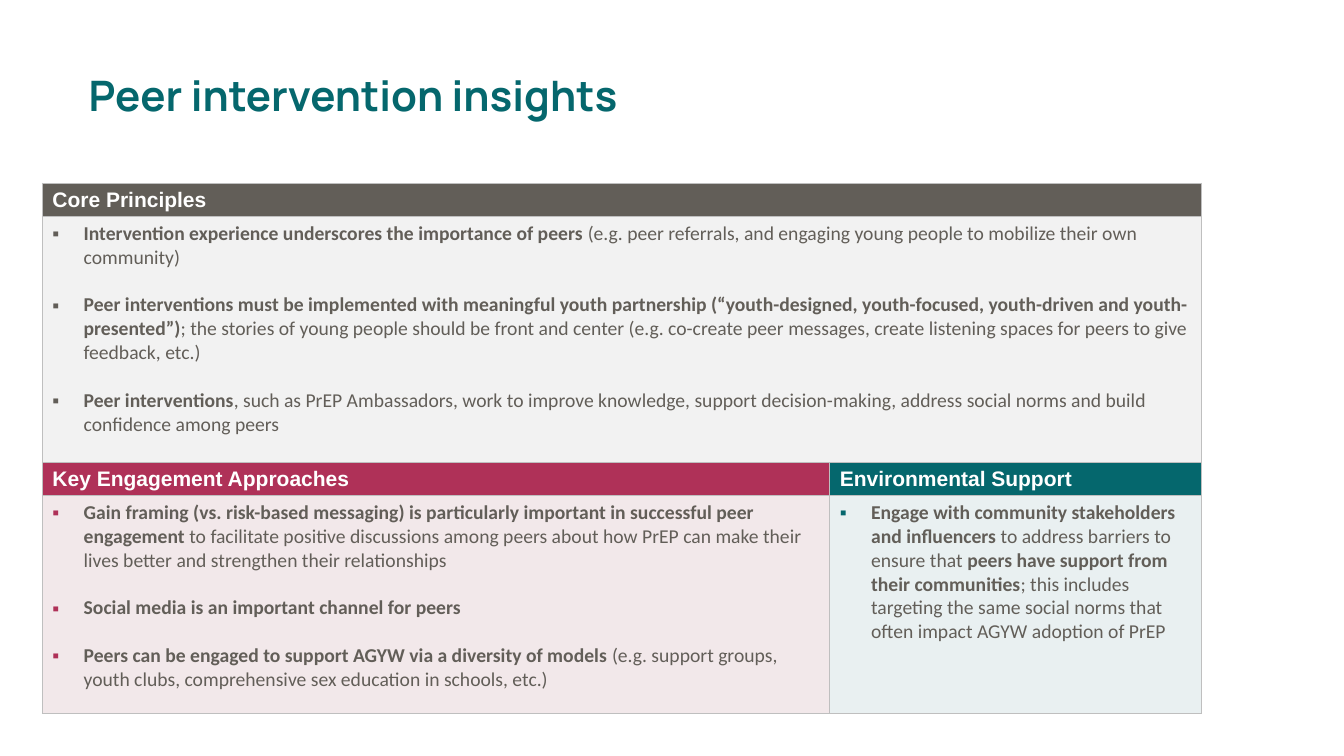
from dataclasses import dataclass

from lxml.etree import SubElement
from pptx import Presentation
from pptx.dml.color import RGBColor
from pptx.enum.text import MSO_ANCHOR as Anchor, MSO_AUTO_SIZE as AutoSize, PP_ALIGN as Align
from pptx.oxml.ns import qn
from pptx.util import Emu, Inches, Pt


@dataclass(frozen=True)
class Theme:
    teal: str = "05676D"
    crimson: str = "AF3158"
    stone: str = "625E58"
    white: str = "FFFFFF"
    border: str = "BFBFBF"
    pale_stone: str = "F2F2F2"
    pale_crimson: str = "F2E8EA"
    pale_teal: str = "E9F0F1"
    title_font: str = "Manrope"
    header_font: str = "Arial"
    body_font: str = "Calibri"
    title_size: float = 30
    header_size: float = 15
    body_size: float = 14
    bullet_gap: float = 17


THEME = Theme()
SLIDE_WIDTH, SLIDE_HEIGHT = 13.33, 7.5
COLUMNS = (7.81, 3.69)
ROWS = (0.33, 2.44, 0.33, 2.16)

# Each bullet is a list of runs that alternate bold and regular
CORE_PRINCIPLES = [
    ["Intervention experience underscores the importance of peers ",
     "(e.g. peer referrals, and engaging young people to mobilize their own community)"],
    ["Peer interventions must be implemented with meaningful youth partnership "
     "(“youth-designed, youth-focused, youth-driven and youth-presented”)",
     "; the stories of young people should be front and center (e.g. co-create peer messages, "
     "create listening spaces for peers to give feedback, etc.)"],
    ["Peer interventions",
     ", such as PrEP Ambassadors, work to improve knowledge, support decision-making, "
     "address social norms and build confidence among peers"],
]
ENGAGEMENT = [
    ["Gain framing (vs. risk-based messaging) is particularly important in successful peer engagement ",
     "to facilitate positive discussions among peers about how PrEP can make their lives better "
     "and strengthen their relationships"],
    ["Social media is an important channel for peers"],
    ["Peers can be engaged to support AGYW via a diversity of models ",
     "(e.g. support groups, youth clubs, comprehensive sex education in schools, etc.)"],
]
SUPPORT = [
    ["Engage with community stakeholders and influencers ",
     "to address barriers to ensure that ",
     "peers have support from their communities",
     "; this includes targeting the same social norms that often impact AGYW adoption of PrEP"],
]


class SlideBuilder:
    def __init__(self, presentation, theme):
        self.theme = theme
        self.width, self.height = presentation.slide_width, presentation.slide_height
        self.slide = presentation.slides.add_slide(presentation.slide_layouts[5])

    def box(self, left, top, width, height):
        """Turn shares of the slide's size into lengths."""
        return (Emu(round(left * self.width)), Emu(round(top * self.height)),
                Emu(round(width * self.width)), Emu(round(height * self.height)))

    def run(self, paragraph, text, font, size, color, bold=True):
        run = paragraph.add_run()
        run.text = text
        run.font.name, run.font.size, run.font.bold = font, Pt(size), bold
        run.font.color.rgb = RGBColor.from_string(color)

    def title(self, text, *shares):
        shape = self.slide.shapes.title
        shape.left, shape.top, shape.width, shape.height = self.box(*shares)
        frame = shape.text_frame
        frame.auto_size, frame.word_wrap = AutoSize.NONE, True
        frame.vertical_anchor = Anchor.MIDDLE
        frame.margin_left = Inches(0.88)
        paragraph = frame.paragraphs[0]
        paragraph.alignment, paragraph.line_spacing = Align.LEFT, 0.9
        self.run(paragraph, text, self.theme.title_font, self.theme.title_size, self.theme.teal)

    def table(self, columns, rows, *shares):
        table = self.slide.shapes.add_table(len(rows), len(columns), *self.box(*shares)).table
        table.first_row = table.horz_banding = False
        for column, width in zip(table.columns, columns):
            column.width = Inches(width)
        for row, height in zip(table.rows, rows):
            row.height = Inches(height)
        for cell in table.iter_cells():
            self.borders(cell)
        return table

    def borders(self, cell):
        properties = cell._tc.get_or_add_tcPr()
        for side in ("a:lnL", "a:lnR", "a:lnT", "a:lnB"):
            line = SubElement(properties, qn(side), w=str(Pt(1)))
            SubElement(SubElement(line, qn("a:solidFill")), qn("a:srgbClr"), val=self.theme.border)

    def fill(self, cell, color):
        cell.fill.solid()
        cell.fill.fore_color.rgb = RGBColor.from_string(color)

    def header(self, cell, text, color):
        self.fill(cell, color)
        cell.vertical_anchor = Anchor.MIDDLE
        cell.margin_top = cell.margin_bottom = Inches(0.04)
        self.run(cell.text_frame.paragraphs[0], text,
                 self.theme.header_font, self.theme.header_size, self.theme.white)

    def bullets(self, cell, items, color, bullet_color):
        self.fill(cell, color)
        cell.vertical_anchor = Anchor.TOP
        frame = cell.text_frame
        for index, runs in enumerate(items):
            paragraph = frame.add_paragraph() if index else frame.paragraphs[0]
            self.bullet(paragraph, bullet_color)
            if index:
                paragraph.space_before = Pt(self.theme.bullet_gap)
            for position, text in enumerate(runs):
                self.run(paragraph, text, self.theme.body_font, self.theme.body_size,
                         self.theme.stone, bold=position % 2 == 0)

    def bullet(self, paragraph, color):
        properties = paragraph._p.get_or_add_pPr()
        indent = Inches(0.31)
        properties.set("marL", str(indent))
        properties.set("indent", str(-indent))
        SubElement(SubElement(properties, qn("a:buClr")), qn("a:srgbClr"), val=color)
        SubElement(properties, qn("a:buFont"), typeface=self.theme.header_font)
        SubElement(properties, qn("a:buChar"), char="▪")


def main():
    presentation = Presentation()
    presentation.slide_width, presentation.slide_height = Inches(SLIDE_WIDTH), Inches(SLIDE_HEIGHT)
    builder = SlideBuilder(presentation, THEME)

    # Title
    builder.title("Peer intervention insights", 0, 0.35 / SLIDE_HEIGHT,
                  11.5 / SLIDE_WIDTH, 1.25 / SLIDE_HEIGHT)

    # Table frame, with the top section spanning both columns
    table = builder.table(COLUMNS, ROWS, 0.42 / SLIDE_WIDTH, 1.82 / SLIDE_HEIGHT,
                          sum(COLUMNS) / SLIDE_WIDTH, sum(ROWS) / SLIDE_HEIGHT)
    for row in (0, 1):
        table.cell(row, 0).merge(table.cell(row, 1))

    # Sections: a header cell with its bullets in the row below
    sections = [
        (0, 0, "Core Principles", CORE_PRINCIPLES, THEME.stone, THEME.pale_stone),
        (2, 0, "Key Engagement Approaches", ENGAGEMENT, THEME.crimson, THEME.pale_crimson),
        (2, 1, "Environmental Support", SUPPORT, THEME.teal, THEME.pale_teal),
    ]
    for row, column, heading, items, strong, pale in sections:
        builder.header(table.cell(row, column), heading, strong)
        builder.bullets(table.cell(row + 1, column), items, pale, strong)

    presentation.save("out.pptx")


if __name__ == "__main__":
    main()
